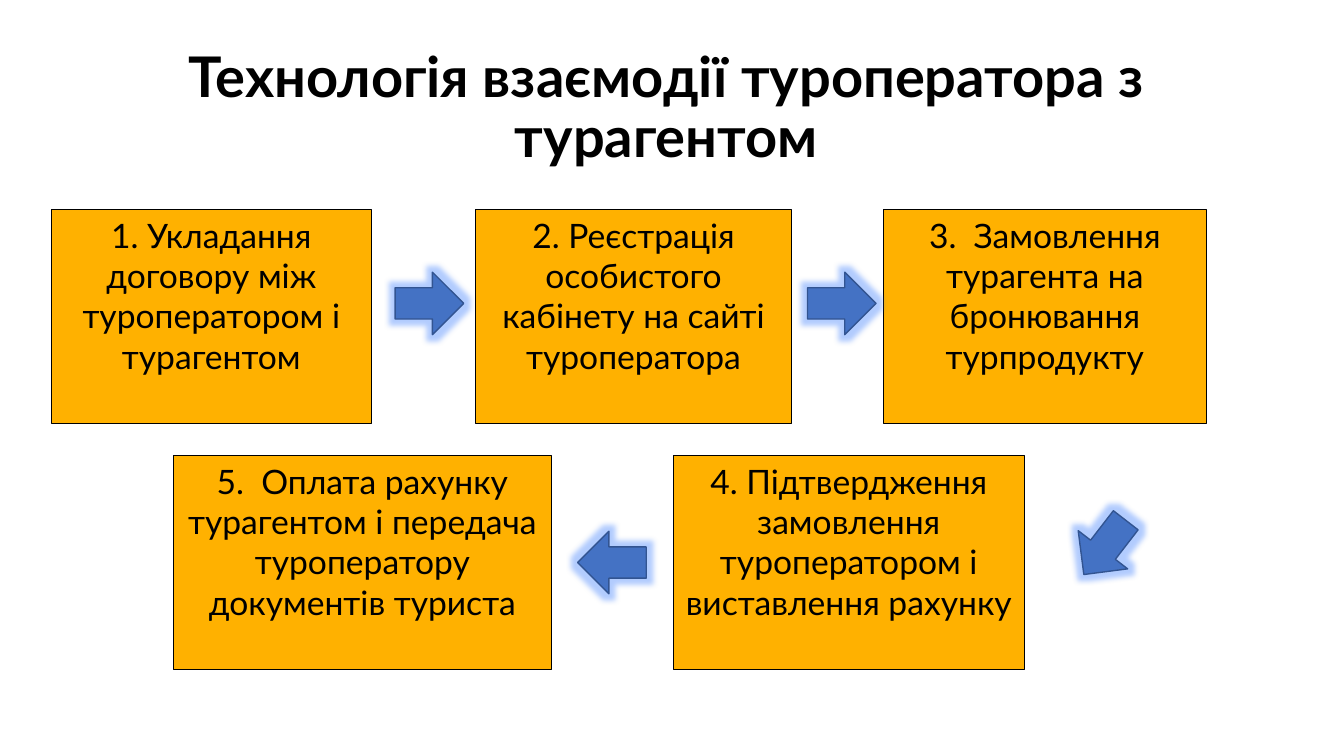
from lxml import etree
from pptx import Presentation
from pptx.dml.color import RGBColor
from pptx.enum.shapes import MSO_SHAPE
from pptx.enum.text import MSO_ANCHOR, MSO_AUTO_SIZE, PP_ALIGN
from pptx.oxml.ns import qn
from pptx.util import Inches, Pt

RECT, ARROW = MSO_SHAPE.RECTANGLE, MSO_SHAPE.RIGHT_ARROW
TOP, MIDDLE = MSO_ANCHOR.TOP, MSO_ANCHOR.MIDDLE
CENTER, FIXED = PP_ALIGN.CENTER, MSO_AUTO_SIZE.NONE
COLORS = {"ink": "000000", "step": "FFB100", "arrow": "4472C4",
          "edge": "325491", "glow": "3F80FF"}
TITLE = "Технологія взаємодії туроператора з турагентом"
UPPER, LOWER, TALL = 27.73, 60.27, 28.27
STEPS = [
    (3.83, UPPER, 23.78, "1. Укладання договору між туроператором і турагентом"),
    (35.4, UPPER, 23.48, "2. Реєстрація особистого кабінету на сайті туроператора"),
    (65.7, UPPER, 24.08, "3.  Замовлення турагента на бронювання турпродукту"),
    (50.1, LOWER, 26.1, "4. Підтвердження замовлення туроператором і виставлення рахунку"),
    (12.9, LOWER, 28.13, "5.  Оплата рахунку турагентом і передача туроператору документів туриста"),
]
ARROWS = [(29.4, 36, 0), (60.08, 36, 0), (42.98, 70.27, 180), (79.65, 68.27, 127.7)]


def color(name):
    return RGBColor.from_string(COLORS[name])


def apply(target, values):
    for name, value in values.items():
        setattr(target, name, value)


class Deck:
    font = "Lato"

    def __init__(self):
        self.prs = Presentation()
        apply(self.prs, {"slide_width": Inches(13.33), "slide_height": Inches(7.5)})
        self.slide = self.prs.slides.add_slide(self.prs.slide_layouts[5])

    def place(self, left, top, width, height):
        col, row = self.prs.slide_width / 100, self.prs.slide_height / 100
        return [round(n) for n in (left * col, top * row, width * col, height * row)]

    def label(self, shape, text, size, bold, anchor, spacing):
        frame = shape.text_frame
        frame.text = text
        apply(frame, {"word_wrap": True, "auto_size": FIXED, "vertical_anchor": anchor})
        line = frame.paragraphs[0]
        apply(line, {"alignment": CENTER, "line_spacing": spacing})
        font = line.runs[0].font
        apply(font, {"name": self.font, "size": Pt(size), "bold": bold})
        font.color.rgb = color("ink")

    def title(self, text, *area):
        shape = self.slide.shapes.title
        names = ("left", "top", "width", "height")
        apply(shape, dict(zip(names, self.place(*area))))
        self.label(shape, text, 40, True, MIDDLE, 0.9)

    def block(self, kind, area, fill, edge, weight):
        shape = self.slide.shapes.add_shape(kind, *self.place(*area))
        shape.shadow.inherit = False
        shape.fill.solid()
        shape.fill.fore_color.rgb = color(fill)
        shape.line.color.rgb = color(edge)
        shape.line.width = Pt(weight)
        return shape

    def step(self, left, top, width, text):
        shape = self.block(RECT, (left, top, width, TALL), "step", "ink", 0.75)
        self.label(shape, text, 24, False, TOP, 1.0)

    def arrow(self, left, top, turn):
        shape = self.block(ARROW, (left, top, 5.1, 8.27), "arrow", "edge", 1)
        shape.rotation = turn
        effects = shape.element.spPr.find(qn("a:effectLst"))
        glow = etree.SubElement(effects, qn("a:glow"), rad=str(Pt(8)))
        tint = etree.SubElement(glow, qn("a:srgbClr"), val=COLORS["glow"])
        etree.SubElement(tint, qn("a:alpha"), val="40000")


def main():
    deck = Deck()
    deck.title(TITLE, 6.45, 4.8, 86.25, 19.33)
    for step in STEPS:
        deck.step(*step)
    for arrow in ARROWS:
        deck.arrow(*arrow)
    deck.prs.save("out.pptx")


if __name__ == "__main__":
    main()
